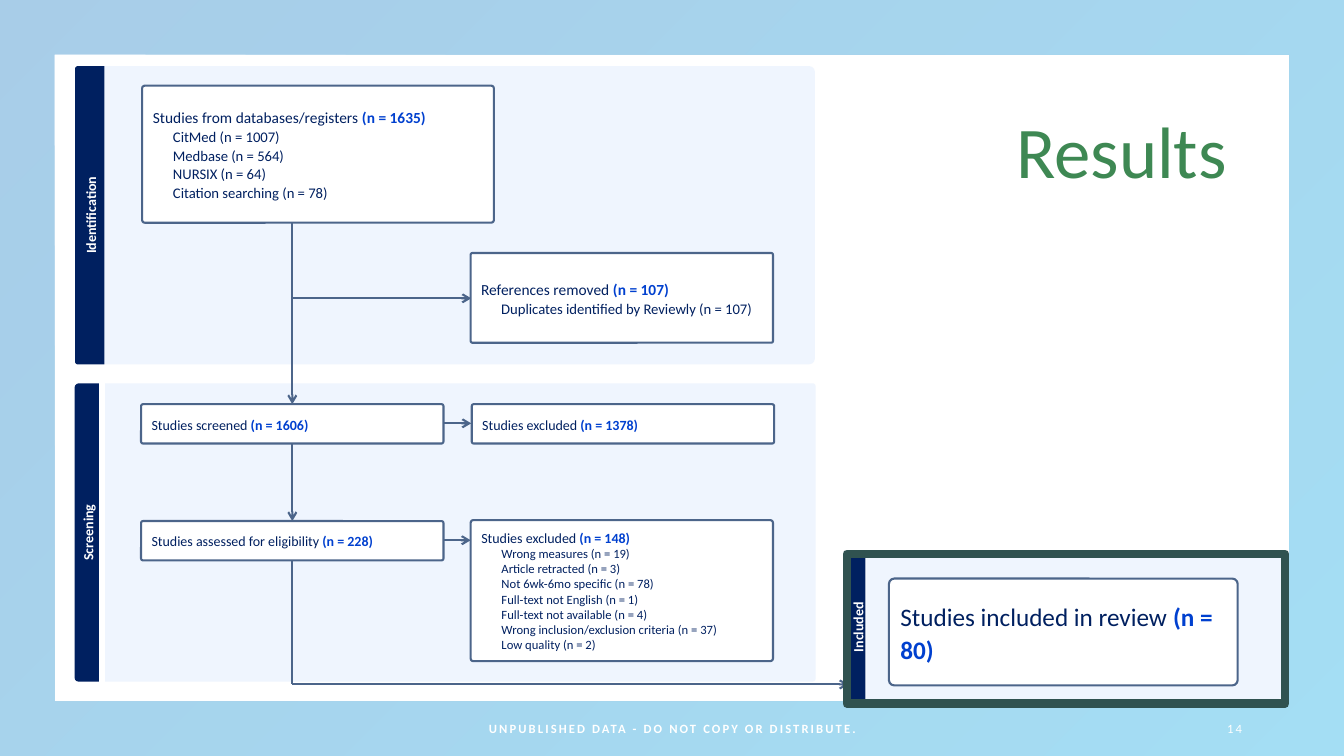
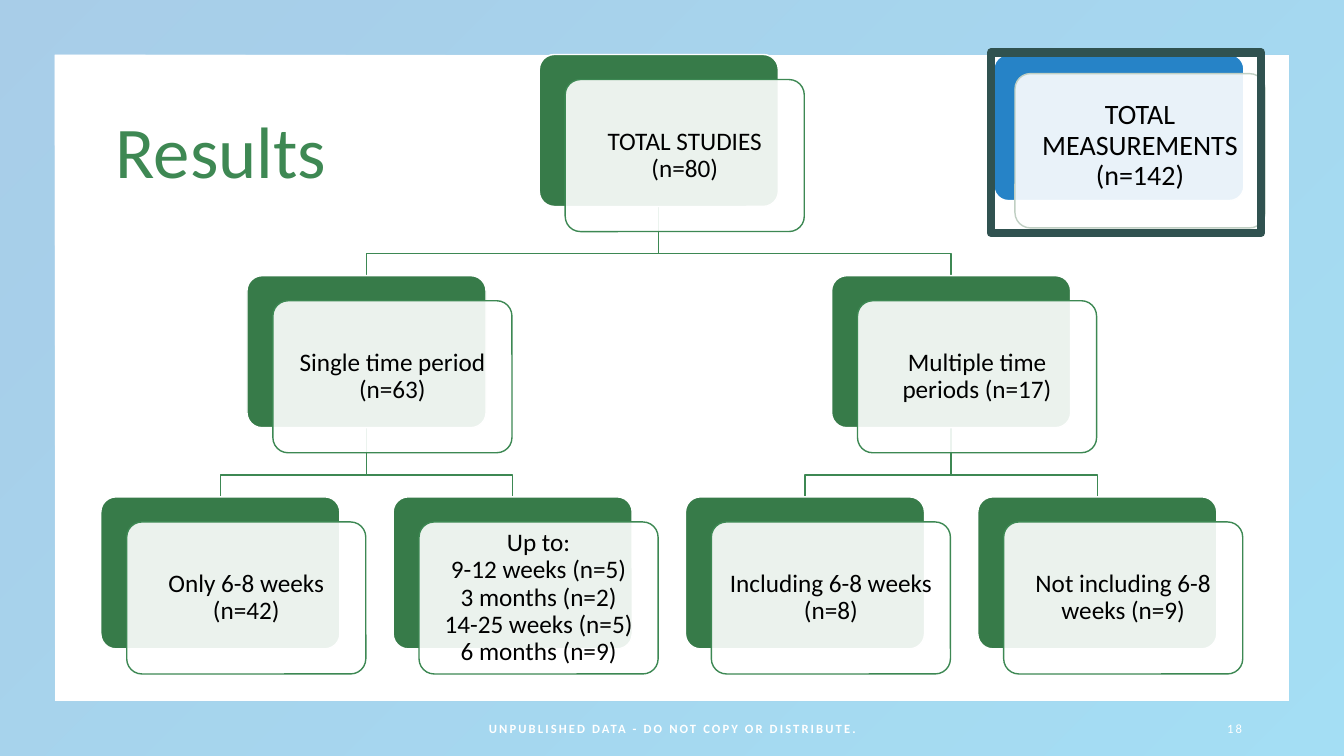
from dataclasses import dataclass
from typing import NamedTuple, Optional

from lxml import etree
from pptx import Presentation
from pptx import util as u
from pptx.dml.color import RGBColor
from pptx.enum import shapes, text
from pptx.oxml.ns import qn

FONT = "Calibri"
COLORS = {
    "white": "FFFFFF",
    "black": "000000",
    "navy": "002060",
    "count": "0040CF",
    "panel": "EFF5FE",
    "flow": "4C658A",
    "highlight": "305250",
    "title": "3E8853",
    "band_start": "2683C6",
    "band_end": "1CADE4",
    "card": "377B49",
    "card_line": "3D8853",
    "measure": "2683C7",
    "measure_line": "C0CFC3",
}
SHAPE = shapes.MSO_SHAPE
ALIGN = text.PP_ALIGN
MARGINS = (7.2, 3.6, 7.2, 3.6)
LINE_COLOR = "flow"
LINE_WIDTH = 1.5


class Rect(NamedTuple):
    left: float
    top: float
    width: float
    height: float

    def turned(self) -> "Rect":
        shift = (self.width - self.height) / 2
        return Rect(self.left + shift, self.top - shift, self.height, self.width)

    def points(self) -> list:
        return [u.Pt(value) for value in self]


class Span(NamedTuple):
    text: str
    size: float
    color: str = "navy"
    bold: bool = False


@dataclass
class Stage:
    label: str
    tab: Rect
    panel: Rect
    tab_round: float
    panel_round: float


@dataclass
class FlowBox:
    rect: Rect
    label: str
    count: str
    size: float = 10
    details: tuple = ()
    detail_size: float = 10.5
    spacing: float = 1.07
    corner: float = 0.05


class Arrow(NamedTuple):
    x1: float
    y1: float
    x2: float
    y2: float
    head: bool = True


class Node(NamedTuple):
    lines: tuple
    level: int
    slot: float
    parent: Optional[int] = None


STAGES = [
    Stage("Identification", Rect(53.6, 47.2, 20.9, 213.1), Rect(74.5, 47.2, 507.6, 213.1), 0.09, 0.02),
    Stage("Screening", Rect(53.3, 273.8, 17.3, 213.1), Rect(75, 273.8, 507.6, 213.1), 0.17, 0.01),
    Stage("Included", Rect(606, 396, 12.2, 103.7), Rect(618.8, 396, 298.8, 103.7), 0.17, 0.06),
]
FLOW_BOXES = [
    FlowBox(Rect(101.5, 61.2, 251.3, 97.9), "Studies from databases/registers ", "(n = 1635)", 11,
            ("CitMed (n = 1007)", "Medbase (n = 564)", "NURSIX (n = 64)",
             "Citation searching (n = 78)"), corner=0.02),
    FlowBox(Rect(336.2, 180.7, 216, 64.1), "References removed ", "(n = 107)", 11,
            ("Duplicates identified by Reviewly (n = 107)",), corner=0.02),
    FlowBox(Rect(100.8, 288.7, 216, 28.1), "Studies screened ", "(n = 1606)"),
    FlowBox(Rect(337, 288.7, 216, 28.1), "Studies excluded ", "(n = 1378)"),
    FlowBox(Rect(100.8, 372.2, 216, 28.1), "Studies assessed for eligibility ", "(n = 228)"),
    FlowBox(Rect(336.2, 371.5, 216, 100.8), "Studies excluded ", "(n = 148)", 10,
            ("Wrong measures (n = 19)", "Article retracted (n = 3)",
             "Not 6wk-6mo specific (n = 78)", "Full-text not English (n = 1)",
             "Full-text not available (n = 4)",
             "Wrong inclusion/exclusion criteria (n = 37)", "Low quality (n = 2)"),
            detail_size=9, spacing=1, corner=0.02),
    FlowBox(Rect(635, 413.3, 249.1, 76.3), "Studies included in review ", "(n = 80)", 18),
]
TRUNK = 208.8
ARROWS = [
    Arrow(TRUNK, 158.4, TRUNK, 288.7),
    Arrow(TRUNK, 213.1, 336.6, 213.1),
    Arrow(316.4, 302.4, 336.6, 302.4),
    Arrow(316.4, 385.9, 336.2, 385.9),
    Arrow(TRUNK, 316.8, TRUNK, 372.2),
    Arrow(TRUNK, 401, TRUNK, 488.9, False),
    Arrow(TRUNK, 488.9, 606.2, 488.9),
]
NODES = [
    Node(("TOTAL STUDIES (n=80)",), 0, 1.5),
    Node(("Single time period (n=63)",), 1, 0.5, 0),
    Node(("Multiple time periods (n=17)",), 1, 2.5, 0),
    Node(("Only 6-8 weeks (n=42)",), 2, 0, 1),
    Node(("Up to:", "9-12 weeks (n=5)", "3 months (n=2)", "14-25 weeks (n=5)",
          "6 months (n=9)"), 2, 1, 1),
    Node(("Including 6-8 weeks (n=8)",), 2, 2, 2),
    Node(("Not including 6-8 weeks (n=9)",), 2, 3, 2),
]
CARD_WIDTH, CARD_HEIGHT = 170.8, 108.6
SLOT_PITCH, LEVEL_PITCH = 208.8, 158
TREE_LEFT, TREE_TOP = 72, 38.9
CARD_SHIFT = (18.5, 17.9)
ELBOW_DROP = 33.8


def rgb(name: str) -> RGBColor:
    return RGBColor.from_string(COLORS[name])


def write(para, content: str, *, size: float, color: str = "navy", bold: bool = False,
          tracking: float = 0) -> None:
    span = para.add_run()
    span.text = content
    span.font.name = FONT
    span.font.size = u.Pt(size)
    span.font.bold = bold
    span.font.color.rgb = rgb(color)
    if tracking:
        span.font._element.set("spc", str(int(tracking * 100)))


def fill_text(box, lines: list, *, align=ALIGN.LEFT, spacing: float = 1, indent: float = 0,
              margins: tuple = MARGINS, tracking: float = 0) -> None:
    frame = box.text_frame
    frame.word_wrap = True
    frame.vertical_anchor = text.MSO_ANCHOR.MIDDLE
    (frame.margin_left, frame.margin_top,
     frame.margin_right, frame.margin_bottom) = [u.Pt(value) for value in margins]
    for index, spans in enumerate(lines):
        para = frame.add_paragraph() if index else frame.paragraphs[0]
        para.alignment = align
        para.line_spacing = spacing
        if index and indent:
            properties = para._p.get_or_add_pPr()
            properties.set("marL", str(u.Pt(indent)))
            properties.set("indent", "0")
        for span in spans:
            write(para, span.text, size=span.size, color=span.color, bold=span.bold,
                  tracking=tracking)


def set_alpha(shape, percent: int) -> None:
    for color in shape._element.spPr.iter(qn("a:srgbClr")):
        etree.SubElement(color, qn("a:alpha"), val=str(percent * 1000))


def add_box(page, kind, rect: Rect, *, fill: Optional[str] = None, alpha: int = 100,
            line: Optional[str] = None, width: float = 1, corners: tuple = (),
            rotation: float = 0):
    placed = rect.turned() if rotation else rect
    box = page.shapes.add_shape(kind, *placed.points())
    box.shadow.inherit = False
    box.rotation = rotation
    for index, corner in enumerate(corners):
        box.adjustments[index] = corner
    if fill:
        box.fill.solid()
        box.fill.fore_color.rgb = rgb(fill)
    else:
        box.fill.background()
    if alpha < 100:
        set_alpha(box, alpha)
    if line:
        box.line.color.rgb = rgb(line)
        box.line.width = u.Pt(width)
    else:
        box.line.fill.background()
    return box


def add_label(page, rect: Rect, span: Span, *, align, spacing: float = 1,
              tracking: float = 0) -> None:
    box = page.shapes.add_textbox(*rect.points())
    fill_text(box, [[span]], align=align, spacing=spacing, tracking=tracking)


def add_page(deck, number: str, title_align):
    page = deck.slides.add_slide(deck.slide_layouts[6])
    band = add_box(page, SHAPE.FRAME, Rect(0, 0, 960, 540), corners=(0.072,))
    band.fill.gradient()
    band.fill.gradient_angle = 315
    for stop, color, position in zip(band.fill.gradient_stops, ("band_start", "band_end"), (0, 1)):
        stop.color.rgb = rgb(color)
        stop.position = position
    set_alpha(band, 40)
    add_label(page, Rect(75.6, 58.3, 807.8, 104.4), Span("Results", 52, "title"),
              align=title_align, spacing=0.9)
    add_label(page, Rect(318.2, 506.2, 324, 28.8),
              Span("UNPUBLISHED DATA - DO NOT COPY OR DISTRIBUTE.", 9, "white", True),
              align=ALIGN.CENTER, tracking=1.5)
    add_label(page, Rect(678.2, 506.2, 216, 28.8), Span(number, 9, "white"),
              align=ALIGN.RIGHT, tracking=1.5)
    return page


def add_highlight(page, rect: Rect) -> None:
    add_box(page, SHAPE.RECTANGLE, rect, line="highlight", width=6)


def add_stage(page, stage: Stage) -> None:
    kind = SHAPE.ROUND_2_SAME_RECTANGLE
    add_box(page, kind, stage.panel, fill="panel", corners=(stage.panel_round, 0), rotation=90)
    tab = add_box(page, kind, stage.tab, fill="navy", corners=(stage.tab_round, 0), rotation=270)
    fill_text(tab, [[Span(stage.label, 10, "white", True)]], align=ALIGN.CENTER, spacing=1.07)


def add_arrow(page, arrow: Arrow) -> None:
    ends = [u.Pt(value) for value in arrow[:4]]
    connector = page.shapes.add_connector(shapes.MSO_CONNECTOR.STRAIGHT, *ends)
    connector.line.color.rgb = rgb(LINE_COLOR)
    connector.line.width = u.Pt(LINE_WIDTH)
    properties = connector._element.spPr
    if arrow.head:
        etree.SubElement(properties.get_or_add_ln(), qn("a:tailEnd"), type="arrow")
    etree.SubElement(properties, qn("a:effectLst"))


def add_flow_box(page, item: FlowBox) -> None:
    box = add_box(page, SHAPE.ROUNDED_RECTANGLE, item.rect, fill="white", line=LINE_COLOR,
                  width=LINE_WIDTH, corners=(item.corner,))
    heading = [Span(item.label, item.size), Span(item.count, item.size, "count", True)]
    details = [[Span(detail, item.detail_size)] for detail in item.details]
    fill_text(box, [heading, *details], spacing=item.spacing, indent=14.4)


def add_card(page, back: Rect, front: Rect, lines: tuple, *, size: float, fill: str,
             line: str, margins: tuple) -> None:
    kind = SHAPE.ROUNDED_RECTANGLE
    add_box(page, kind, back, fill=fill, line="white", corners=(0.1,))
    card = add_box(page, kind, front, fill="white", alpha=90, line=line, corners=(0.1,))
    fill_text(card, [[Span(content, size, "black")] for content in lines],
              align=ALIGN.CENTER, spacing=0.9, margins=margins)


def node_rect(node: Node) -> Rect:
    return Rect(TREE_LEFT + node.slot * SLOT_PITCH, TREE_TOP + node.level * LEVEL_PITCH,
                CARD_WIDTH, CARD_HEIGHT)


def add_branch(page, parent: Rect, child: Rect) -> None:
    start_x, end_x = (rect.left + CARD_WIDTH / 2 for rect in (parent, child))
    start_y = parent.top + CARD_HEIGHT
    bend_y = start_y + ELBOW_DROP
    corners = [(start_x, bend_y), (end_x, bend_y), (end_x, child.top)]
    builder = page.shapes.build_freeform(u.Pt(start_x), u.Pt(start_y))
    builder.add_line_segments([(u.Pt(x), u.Pt(y)) for x, y in corners], close=False)
    branch = builder.convert_to_shape()
    branch.shadow.inherit = False
    branch.fill.background()
    branch.line.color.rgb = rgb("card_line")
    branch.line.width = u.Pt(1)


def build_flow_page(deck) -> None:
    page = add_page(deck, "14", ALIGN.RIGHT)
    for stage in STAGES:
        add_stage(page, stage)
    for arrow in ARROWS:
        add_arrow(page, arrow)
    for item in FLOW_BOXES:
        add_flow_box(page, item)
    add_highlight(page, Rect(604.8, 395.6, 313.2, 107.1))


def build_tree_page(deck) -> None:
    page = add_page(deck, "18", ALIGN.LEFT)
    for node in NODES:
        if node.parent is not None:
            add_branch(page, node_rect(NODES[node.parent]), node_rect(node))
    for node in NODES:
        back = node_rect(node)
        front = back._replace(left=back.left + CARD_SHIFT[0], top=back.top + CARD_SHIFT[1])
        add_card(page, back, front, node.lines, size=18, fill="card", line="card_line",
                 margins=(5, 5, 5, 5))
    add_card(page, Rect(709.9, 38.9, 178.6, 104.4), Rect(725, 52.6, 178.6, 110.2),
             ("TOTAL MEASUREMENTS (n=142)",), size=20, fill="measure", line="measure_line",
             margins=(4.3, 4.3, 4.3, 11))
    add_highlight(page, Rect(707.8, 37.4, 193, 128.9))


def main() -> None:
    deck = Presentation()
    deck.slide_width, deck.slide_height = u.Pt(960), u.Pt(540)
    build_flow_page(deck)
    build_tree_page(deck)
    deck.save("out.pptx")


if __name__ == "__main__":
    main()
